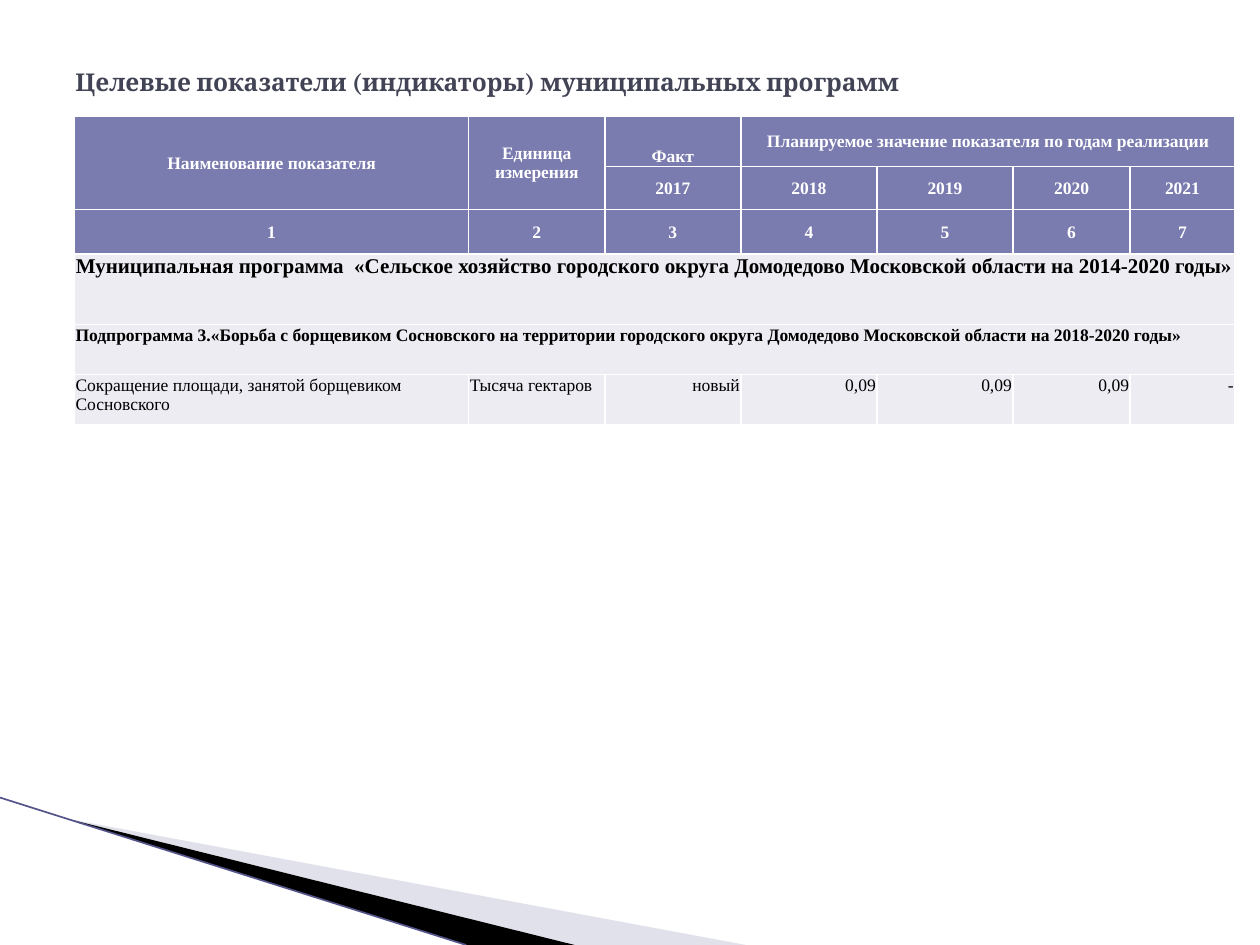
from lxml.etree import SubElement
from pptx import Presentation
from pptx.dml.color import RGBColor
from pptx.enum.shapes import MSO_CONNECTOR as Connector
from pptx.enum.text import MSO_ANCHOR as Anchor, PP_ALIGN as Align
from pptx.oxml.ns import qn
from pptx.util import Inches, Pt

BODY_FONT = "Times New Roman"
HEADER_FILL = "7A7BAE"
BODY_FILL = "ECECF2"
COLUMN_WIDTHS = [3.13, 1.08, 1.08, 1.08, 1.08, 0.93, 0.83]
ROW_HEIGHTS = [0.4, 0.32, 0.35, 0.56, 0.4, 0.4]
HEADER_ROWS = [
    ["Наименование показателя", "Единица измерения", "Факт",
     "Планируемое значение показателя по годам реализации", "", "", ""],
    ["", "", "2017", "2018", "2019", "2020", "2021"],
    ["1", "2", "3", "4", "5", "6", "7"],
]
PROGRAM = ("Муниципальная программа  «Сельское хозяйство городского округа "
           "Домодедово Московской области на 2014-2020 годы»")
SUBPROGRAM = ("Подпрограмма 3.«Борьба с борщевиком Сосновского на территории "
              "городского округа Домодедово Московской области на 2018-2020 годы»")
INDICATOR = ["Сокращение площади, занятой борщевиком Сосновского",
             "Тысяча гектаров", "новый", "0,09", "0,09", "0,09", "-"]
MERGES = [(0, 0, 1, 0), (0, 1, 1, 1), (0, 3, 0, 6), (3, 0, 3, 6), (4, 0, 4, 6)]


def color(value):
    return RGBColor.from_string(value)


def write_text(frame, text, font=BODY_FONT, size=10, fill="000000",
               bold=False, align=Align.LEFT):
    frame.word_wrap = True
    paragraph = frame.paragraphs[0]
    paragraph.alignment = align
    run = paragraph.add_run()
    run.text = text
    run.font.name = font
    run.font.size = Pt(size)
    run.font.bold = bold
    run.font.color.rgb = color(fill)


def add_wedge(slide, points, fill, opacity=100):
    corners = [(Inches(x), Inches(y)) for x, y in points]
    builder = slide.shapes.build_freeform(*corners[0])
    builder.add_line_segments(corners[1:])
    shape = builder.convert_to_shape()
    shape.shadow.inherit = False
    shape.line.fill.background()
    shape.fill.solid()
    shape.fill.fore_color.rgb = color(fill)
    if opacity < 100:
        tone = shape.fill._xPr.find(".//" + qn("a:srgbClr"))
        SubElement(tone, qn("a:alpha"), val=str(opacity * 1000))


def add_corner(slide, left, top, width, height):
    bottom = top + height
    tip = (left + 0.54, top + 0.17)
    add_wedge(slide, [tip, (left + width, bottom), (left + 4.56, bottom)], "B6B6D1", 40)
    add_wedge(slide, [tip, (left + 4.56, bottom), (left + 3.7, bottom)], "000000")
    edge = slide.shapes.add_connector(
        Connector.STRAIGHT, Inches(left), Inches(top), Inches(left + 3.7), Inches(bottom))
    edge.line.color.rgb = color("53548A")
    edge.line.width = Pt(0.95)
    SubElement(edge._element.spPr, qn("a:effectLst"))


def add_title(slide, left, top, width, height):
    box = slide.shapes.add_textbox(Inches(left), Inches(top), Inches(width), Inches(height))
    box.text_frame.vertical_anchor = Anchor.MIDDLE
    write_text(box.text_frame, "Целевые показатели (индикаторы) муниципальных программ",
               font="Cambria", size=14, fill="424456", bold=True)


def format_cell(cell, fill, anchor):
    cell.margin_left = cell.margin_right = cell.margin_top = Inches(0.01)
    cell.margin_bottom = 0
    cell.vertical_anchor = anchor
    properties = cell._tc.get_or_add_tcPr()
    for side in ("lnL", "lnR", "lnT", "lnB"):
        border = SubElement(properties, qn("a:" + side), w=str(Pt(1)))
        SubElement(SubElement(border, qn("a:solidFill")), qn("a:srgbClr"), val="FFFFFF")
    cell.fill.solid()
    cell.fill.fore_color.rgb = color(fill)


def add_indicator_table(slide, left, top, width, height):
    table = slide.shapes.add_table(
        len(ROW_HEIGHTS), len(COLUMN_WIDTHS),
        Inches(left), Inches(top), Inches(width), Inches(height)).table
    for column, size in zip(table.columns, COLUMN_WIDTHS):
        column.width = Inches(size)
    for row_index, (row, size) in enumerate(zip(table.rows, ROW_HEIGHTS)):
        row.height = Inches(size)
        is_header = row_index < len(HEADER_ROWS)
        for cell in row.cells:
            format_cell(cell, HEADER_FILL if is_header else BODY_FILL,
                        Anchor.MIDDLE if is_header else Anchor.TOP)
    for first_row, first_column, last_row, last_column in MERGES:
        table.cell(first_row, first_column).merge(table.cell(last_row, last_column))

    for row_index, labels in enumerate(HEADER_ROWS):
        for column_index, label in enumerate(labels):
            if label:
                write_text(table.cell(row_index, column_index).text_frame, label,
                           fill="FFFFFF", bold=True, align=Align.CENTER)
    table.cell(0, 2).vertical_anchor = Anchor.BOTTOM
    write_text(table.cell(3, 0).text_frame, PROGRAM, size=12, bold=True, align=Align.CENTER)
    write_text(table.cell(4, 0).text_frame, SUBPROGRAM, bold=True)
    for column_index, value in enumerate(INDICATOR):
        write_text(table.cell(5, column_index).text_frame, value,
                   align=Align.LEFT if column_index < 2 else Align.RIGHT)


def main():
    presentation = Presentation()
    presentation.slide_width = Inches(10)
    presentation.slide_height = Inches(7.5)
    slide = presentation.slides.add_slide(presentation.slide_layouts[6])
    add_corner(slide, 0, 6.33, 5.92, 1.17)
    add_title(slide, 0.5, 0.3, 9, 0.69)
    add_indicator_table(slide, 0.59, 0.92, sum(COLUMN_WIDTHS), sum(ROW_HEIGHTS))
    presentation.save("out.pptx")


if __name__ == "__main__":
    main()
